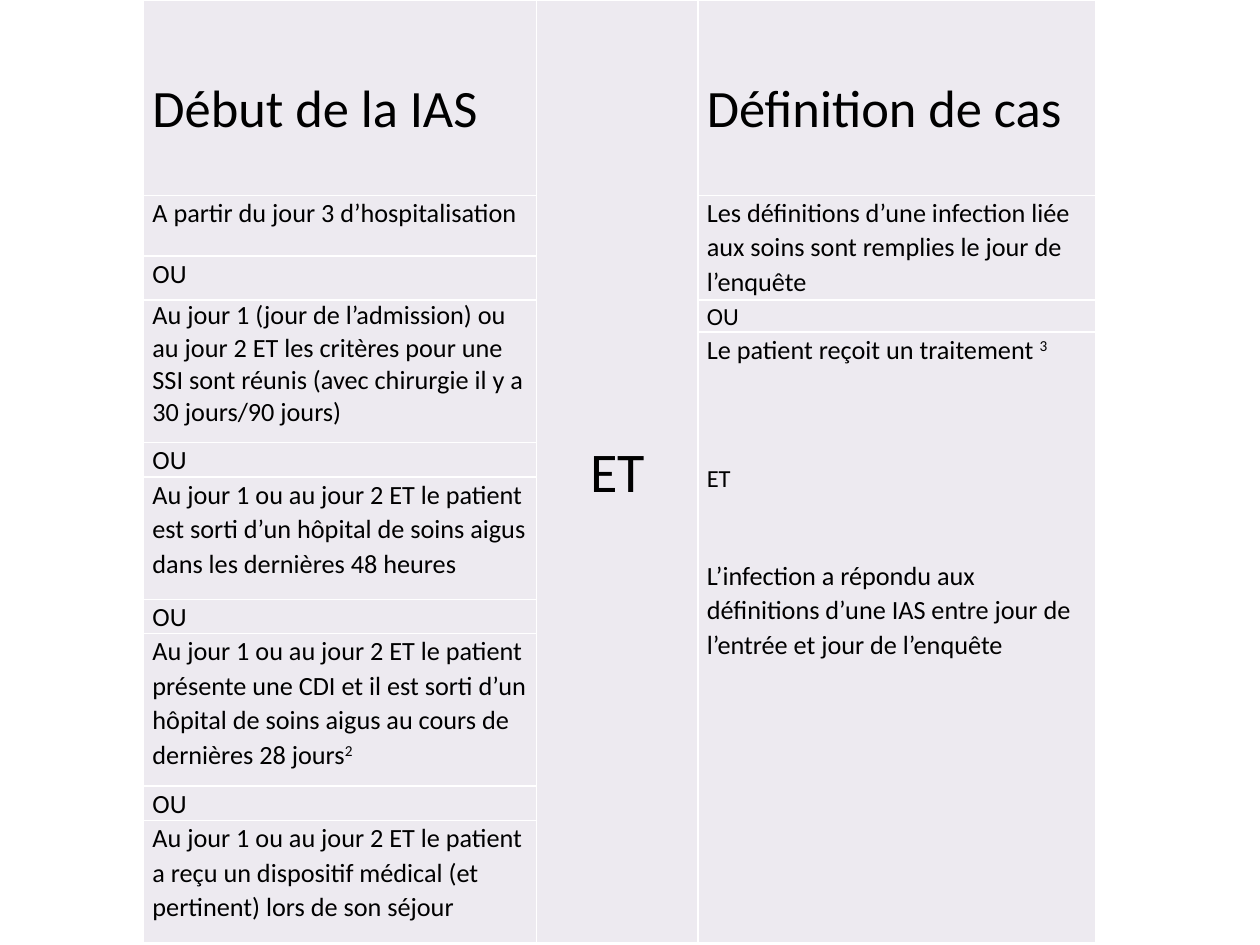
from pptx import Presentation
from pptx.dml.color import RGBColor
from pptx.enum.text import MSO_ANCHOR as ANCHOR, PP_ALIGN as ALIGN
from pptx.oxml import parse_xml
from pptx.oxml.ns import nsdecls
from pptx.util import Inches, Pt

LILAC = RGBColor(0xED, 0xEA, 0xF0)
BLACK = RGBColor(0, 0, 0)
WHITE = RGBColor(0xFF, 0xFF, 0xFF)
FONT = "Calibri"

COL_WIDTHS = [3.12, 1.28, 3.16]
ROW_HEIGHTS = [1.55, 0.48, 0.35, 0.25, 0.88, 0.24, 0.97, 0.24, 1.21, 0.24, 0.97]
HEADER_DROP = Inches(0.58)

# Onset criteria by row: text, then optional superscript note
ONSET = {
    1: ("A partir du jour 3 d’hospitalisation", ""),
    3: ("Au jour 1 (jour de l’admission) ou au jour 2 ET les critères pour une SSI "
        "sont réunis (avec chirurgie il y a 30 jours/90 jours)", ""),
    6: ("Au jour 1 ou au jour 2 ET le patient est sorti d’un hôpital de soins aigus "
        "dans les dernières 48 heures", ""),
    8: ("Au jour 1 ou au jour 2 ET le patient présente une CDI et il est sorti d’un "
        "hôpital de soins aigus au cours de dernières 28 jours", "2"),
    10: ("Au jour 1 ou au jour 2 ET le patient a reçu un dispositif médical "
         "(et pertinent) lors de son séjour", ""),
}
OR_ROWS = [2, 5, 7, 9]


def add_text(p, text, size=15, note="", align=None, spacing=1.07, before=0):
    """Write one paragraph, with an optional superscript note at its end."""
    p.alignment, p.line_spacing, p.space_before = align, spacing, Pt(before)
    for part, baseline in ((text, 0), (note, 30000)):
        if part:
            r = p.add_run()
            r.text = part
            r.font.name, r.font.size = FONT, Pt(size)
            r.font.color.rgb = BLACK
            if baseline:
                r._r.get_or_add_rPr().set("baseline", str(baseline))


def style_cell(cell):
    cell.margin_left = cell.margin_right = Inches(0.07)
    cell.margin_top = cell.margin_bottom = 0
    tc_pr = cell._tc.get_or_add_tcPr()
    for side in ("lnL", "lnR", "lnT", "lnB"):
        tc_pr.append(parse_xml(
            f'<a:{side} {nsdecls("a")} w="{Pt(1)}"><a:solidFill>'
            f'<a:srgbClr val="{WHITE}"/></a:solidFill></a:{side}>'))
    cell.fill.solid()
    cell.fill.fore_color.rgb = LILAC


def first_paragraph(cell):
    return cell.text_frame.paragraphs[0]


def fill_header(cell, text):
    cell.margin_top = HEADER_DROP
    add_text(first_paragraph(cell), text, size=30)


def fill_onset(table):
    fill_header(table.cell(0, 0), "Début de la IAS")
    table.cell(3, 0).merge(table.cell(4, 0))
    for row, (text, note) in ONSET.items():
        spacing = None if row == 3 else 1.07
        add_text(first_paragraph(table.cell(row, 0)), text, note=note, spacing=spacing)
    for row in OR_ROWS:
        add_text(first_paragraph(table.cell(row, 0)), "OU")


def fill_link(table):
    cell = table.cell(0, 1)
    cell.merge(table.cell(len(ROW_HEIGHTS) - 1, 1))
    cell.vertical_anchor = ANCHOR.MIDDLE
    add_text(first_paragraph(cell), "ET", size=32, align=ALIGN.CENTER)


def fill_definition(table):
    fill_header(table.cell(0, 2), "Définition de cas")
    table.cell(1, 2).merge(table.cell(2, 2))
    add_text(first_paragraph(table.cell(1, 2)),
             "Les définitions d’une infection liée aux soins sont remplies le jour de l’enquête")
    add_text(first_paragraph(table.cell(3, 2)), "OU", size=14)

    # Treatment and infection, both required
    cell = table.cell(4, 2)
    cell.merge(table.cell(len(ROW_HEIGHTS) - 1, 2))
    tf = cell.text_frame
    add_text(tf.paragraphs[0], "Le patient reçoit un traitement ", note="3")
    add_text(tf.add_paragraph(), "ET", size=14, before=55)
    add_text(tf.add_paragraph(), "L’infection a répondu aux définitions d’une IAS entre "
             "jour de l’entrée et jour de l’enquête", before=36.5)


def add_criteria_table(s, left, top, width, height):
    table = s.shapes.add_table(len(ROW_HEIGHTS), len(COL_WIDTHS),
                               left, top, width, height).table
    table.first_row = table.horz_banding = False
    for col, w in zip(table.columns, COL_WIDTHS):
        col.width = Inches(w)
    for row, h in zip(table.rows, ROW_HEIGHTS):
        row.height = Inches(h)
    for cell in table.iter_cells():
        style_cell(cell)
    fill_onset(table)
    fill_link(table)
    fill_definition(table)


def main():
    prs = Presentation()
    prs.slide_width, prs.slide_height = Inches(10), Inches(7.5)
    s = prs.slides.add_slide(prs.slide_layouts[6])
    add_criteria_table(s, Inches(1.14), 0, Inches(sum(COL_WIDTHS)),
                       Inches(sum(ROW_HEIGHTS)))
    prs.save("out.pptx")


if __name__ == "__main__":
    main()
